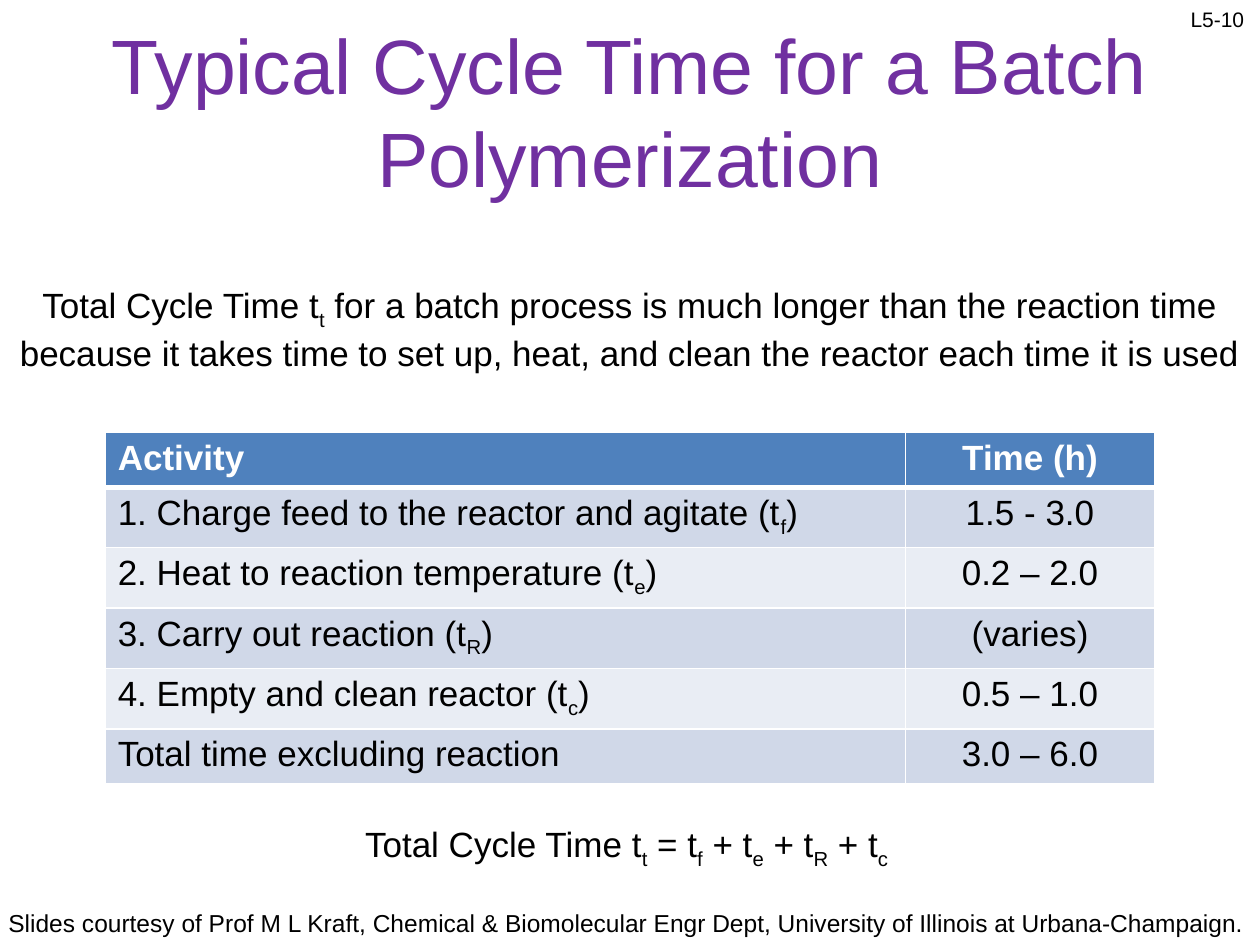
from lxml import etree
from pptx import Presentation
from pptx import util as u
from pptx.dml.color import RGBColor
from pptx.enum import text
from pptx.oxml.ns import qn

BLACK, WHITE, PURPLE, BLUE = "000000", "FFFFFF", "7030A0", "4F81BD"
BANDS = ("D0D8E8", "E9EDF4")
CENTER = text.PP_ALIGN.CENTER
LEFT = text.PP_ALIGN.LEFT
ACTIVITIES = [
    ("Activity", "Time (h)"),
    ("1. Charge feed to the reactor and agitate (t_f)", "1.5 - 3.0"),
    ("2. Heat to reaction temperature (t_e)", "0.2 – 2.0"),
    ("3. Carry out reaction (t_R)", "(varies)"),
    ("4. Empty and clean reactor (t_c)", "0.5 – 1.0"),
    ("Total time excluding reaction", "3.0 – 6.0"),
]


def color(value):
    """Turn a hex string into a colour."""
    return RGBColor.from_string(value)


def write(frame, content, size, ink=BLACK, align=LEFT, bold=False):
    """Write one paragraph, lowering the letter after each underscore."""
    paragraph = frame.paragraphs[0]
    paragraph.alignment = align
    font = paragraph.font
    font.name, font.size, font.bold = "Arial", u.Pt(size), bold
    font.color.rgb = color(ink)
    first, *rest = content.split("_")
    paragraph.add_run().text = first
    for part in rest:
        subscript = paragraph.add_run()
        subscript.text = part[0]
        subscript._r.get_or_add_rPr().set("baseline", "-25000")
        if part[1:]:
            paragraph.add_run().text = part[1:]


def add_text(slide, box, content, size, ink=BLACK, align=LEFT, wrap=False):
    """Place a text box in the given box, in centimetres."""
    frame = slide.shapes.add_textbox(*map(u.Cm, box)).text_frame
    frame.word_wrap = wrap
    frame.auto_size = text.MSO_AUTO_SIZE.SHAPE_TO_FIT_TEXT
    write(frame, content, size, ink, align)
    return frame


def add_title(slide, box, content):
    """Place the slide title, centred in its box."""
    frame = add_text(slide, box, content, 44, PURPLE, CENTER, True)
    frame.auto_size = text.MSO_AUTO_SIZE.NONE
    frame.vertical_anchor = text.MSO_ANCHOR.MIDDLE


def set_borders(cell, bottom):
    """Draw white borders around a cell, with its own bottom width."""
    properties = cell._tc.get_or_add_tcPr()
    widths = {"a:lnL": 1, "a:lnR": 1, "a:lnT": 1, "a:lnB": bottom}
    for position, (tag, width) in enumerate(widths.items()):
        line = etree.Element(qn(tag), w=str(u.Pt(width)))
        fill = etree.SubElement(line, qn("a:solidFill"))
        etree.SubElement(fill, qn("a:srgbClr"), val=WHITE)
        properties.insert(position, line)


def add_activity_table(slide, box, rows):
    """Place the table of activities and their times."""
    left, top, width, height = box
    table = slide.shapes.add_table(len(rows), 2, *map(u.Cm, box)).table
    time_width = 5.03
    table.columns[0].width = u.Cm(width - time_width)
    table.columns[1].width = u.Cm(time_width)
    for row_index, row in enumerate(rows):
        header = row_index == 0
        table.rows[row_index].height = u.Cm(height / len(rows))
        for column, content in enumerate(row):
            cell = table.cell(row_index, column)
            cell.fill.solid()
            cell.fill.fore_color.rgb = color(BLUE if header else BANDS[(row_index - 1) % 2])
            set_borders(cell, 3 if header or row_index == 0 else 1)
            write(cell.text_frame, content, 20, WHITE if header else BLACK,
                  CENTER if column else LEFT, header)


def main():
    """Build and save the slide."""
    presentation = Presentation()
    presentation.slide_width, presentation.slide_height = u.Cm(25.4), u.Cm(19.05)
    slide = presentation.slides.add_slide(presentation.slide_layouts[6])
    add_text(slide, (23.75, 0, 1.65, 0.76), "L5-10", 12)
    add_text(slide, (-0.08, 18.19, 25.55, 0.86),
             "Slides courtesy of Prof M L Kraft, Chemical & Biomolecular Engr Dept, "
             "University of Illinois at Urbana-Champaign.", 14)
    add_title(slide, (0, 0, 25.4, 4.45), "Typical Cycle Time for a Batch Polymerization")
    add_activity_table(slide, (2.12, 8.72, 21.16, 6.24), ACTIVITIES)
    add_text(slide, (7.11, 16.46, 11.18, 1.12),
             "Total Cycle Time t_t = t_f + t_e + t_R + t_c", 20)
    add_text(slide, (0, 5.59, 25.4, 1.96),
             "Total Cycle Time t_t for a batch process is much longer than the reaction time "
             "because it takes time to set up, heat, and clean the reactor each time it is used",
             20, align=CENTER, wrap=True)
    presentation.save("out.pptx")


if __name__ == "__main__":
    main()
